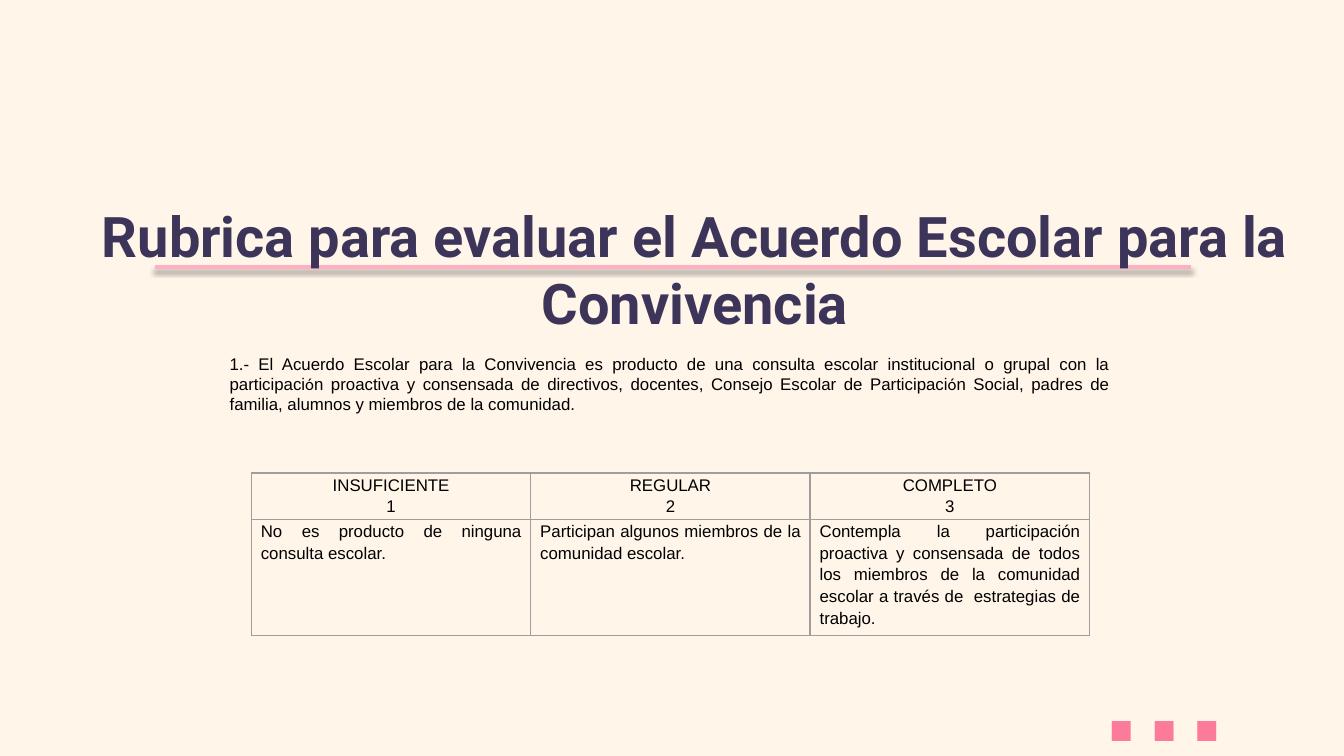
"""Build the school agreement rubric slide."""
import pptx
import pptx.dml.color
import pptx.enum.shapes
import pptx.enum.text
import pptx.oxml
import pptx.oxml.ns
import pptx.util
from pptx.util import Cm

COLORS = {
    "background": "FFF5E9",
    "title": "3C3559",
    "rule": "FEB0C2",
    "dots": "FD7B9A",
    "text": "000000",
    "border": "9E9E9E",
}
ALIGN = pptx.enum.text.PP_ALIGN
NAMESPACE = pptx.oxml.ns.nsdecls("a")


def rgb(name):
    return pptx.dml.color.RGBColor.from_string(COLORS[name])


def write(para, pieces, align, size, color="text", bold=False):
    para.alignment = align
    for text, font in pieces:
        span = para.add_run()
        span.text = text
        look = {"name": font, "size": pptx.util.Pt(size), "bold": bold}
        for key, value in look.items():
            setattr(span.font, key, value)
        span.font.color.rgb = rgb(color)


deck = pptx.Presentation()
deck.slide_width, deck.slide_height = Cm(25.4), Cm(14.29)
page = deck.slides.add_slide(deck.slide_layouts[6])
page.background.fill.solid()
page.background.fill.fore_color.rgb = rgb("background")

rule = page.shapes.add_connector(
    pptx.enum.shapes.MSO_CONNECTOR.STRAIGHT, Cm(2.92), Cm(5.05), Cm(22.5), Cm(5.05)
)
rule.line.color.rgb = rgb("rule")
rule.line.width = pptx.util.Pt(2)
rule._element.spPr.append(pptx.oxml.parse_xml(
    f'<a:effectLst {NAMESPACE}><a:outerShdw blurRad="39370" dist="20320" dir="5400000" '
    'rotWithShape="0"><a:srgbClr val="000000"><a:alpha val="38000"/></a:srgbClr>'
    '</a:outerShdw></a:effectLst>'
))

intro = [
    ("1.- El Acuerdo Escolar para la Convivencia es producto de una consulta escolar "
     "institucional o grupal con la participaci", "Arial"),
    ("ó", "Calibri"),
    ("n proactiva y consensada de directivos, docentes, Consejo Escolar de Participaci", "Arial"),
    ("ó", "Calibri"),
    ("n Social, padres de familia, alumnos y miembros de la comunidad.", "Arial"),
]
heading = [("Rubrica para evaluar el Acuerdo Escolar para la Convivencia", "Roboto")]
texts = [
    ((1.3, 3.56, 23.67, 1.6), 0.25, heading, (ALIGN.CENTER, 30, "title", True)),
    ((4.09, 6.55, 17.12, 2.18), 0.13, intro, (ALIGN.JUSTIFY, 9)),
    ((20.5, 11.35, 4.32, 3.33), 0.13, [("…", "Arial")], (ALIGN.LEFT, 72, "dots", True)),
]
for place, inset, pieces, style in texts:
    box = page.shapes.add_textbox(*map(Cm, place))
    frame = box.text_frame
    frame.word_wrap = True
    frame.margin_top = frame.margin_bottom = Cm(inset)
    write(frame.paragraphs[0], pieces, *style)

rows = [
    (0.81, ALIGN.CENTER, [["INSUFICIENTE", "1"], ["REGULAR", "2"], ["COMPLETO", "3"]]),
    (2.03, ALIGN.JUSTIFY, [
        ["No es producto de ninguna consulta escolar."],
        ["Participan algunos miembros de la comunidad escolar."],
        ["Contempla la participación proactiva y consensada de todos los miembros "
         "de la comunidad escolar a través de  estrategias de trabajo."],
    ]),
]
rubric = page.shapes.add_table(2, 3, Cm(4.75), Cm(8.94), Cm(15.84), Cm(2.84)).table
rubric.first_row = rubric.horz_banding = False
cell_format = {
    "margin_left": Cm(0.18), "margin_right": Cm(0.18), "margin_top": 0, "margin_bottom": 0,
}
for row, (height, align, contents) in enumerate(rows):
    rubric.rows[row].height = Cm(height)
    for column, lines in enumerate(contents):
        cell = rubric.cell(row, column)
        for key, value in cell_format.items():
            setattr(cell, key, value)
        for number, line in enumerate(lines):
            frame = cell.text_frame
            para = frame.add_paragraph() if number else frame.paragraphs[0]
            para.line_spacing = 1.15
            write(para, [(line, "Arial")], align, 9)
        properties = cell._tc.get_or_add_tcPr()
        for side in ("lnL", "lnR", "lnT", "lnB"):
            properties.append(pptx.oxml.parse_xml(
                f'<a:{side} {NAMESPACE} w="9525"><a:solidFill>'
                f'<a:srgbClr val="{COLORS["border"]}"/></a:solidFill></a:{side}>'
            ))
        cell.fill.background()

deck.save("out.pptx")
